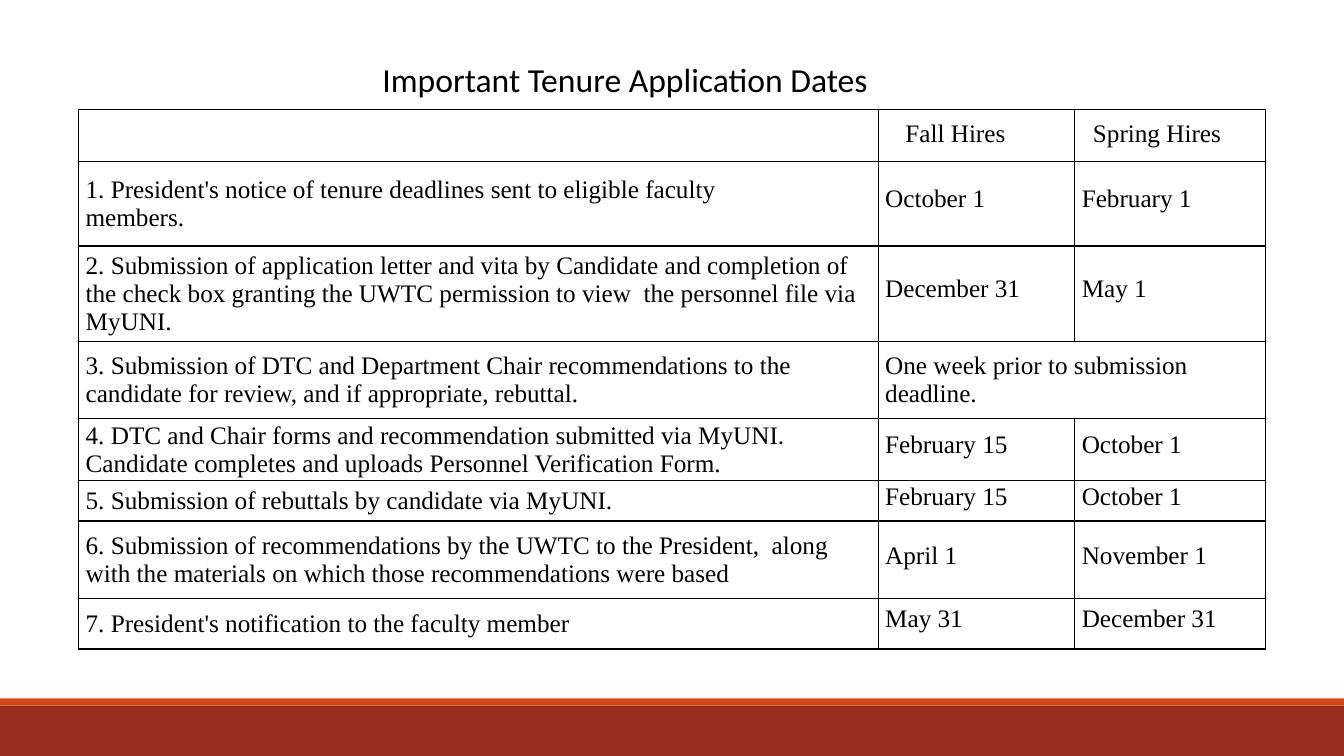
from lxml import etree
from pptx import Presentation
from pptx.dml.color import RGBColor
from pptx.enum.shapes import MSO_SHAPE
from pptx.enum.text import MSO_ANCHOR, PP_ALIGN
from pptx.oxml.ns import qn
from pptx.util import Inches, Pt

RECT = MSO_SHAPE.RECTANGLE
TOP, MIDDLE = MSO_ANCHOR.TOP, MSO_ANCHOR.MIDDLE
CENTER = PP_ALIGN.CENTER
TITLE_ONLY = 5


def rgb(value):
    return RGBColor.from_string(value)


def add_borders(cell, color, width):
    tcPr = cell._tc.get_or_add_tcPr()
    for i, side in enumerate(("lnL", "lnR", "lnT", "lnB")):
        ln = etree.Element(qn(f"a:{side}"), w=str(Pt(width)))
        fill = etree.SubElement(ln, qn("a:solidFill"))
        etree.SubElement(fill, qn("a:srgbClr"), val=color)
        tcPr.insert(i, ln)


prs = Presentation()
prs.slide_width, prs.slide_height = Inches(13.33), Inches(7.5)
slide = prs.slides.add_slide(prs.slide_layouts[TITLE_ONLY])

for top, height, color in ((7, 0.5, "9B2D1F"), (6.93, 0.07, "D34817")):
    sp = slide.shapes.add_shape(RECT, 0, Inches(top), prs.slide_width, Inches(height))
    sp.shadow.inherit = False
    sp.fill.solid()
    sp.fill.fore_color.rgb = rgb(color)
    sp.line.fill.background()

title = slide.shapes.title
box = {"left": 2.51, "top": 0.53, "width": 7.38, "height": 0.5}
for name, value in box.items():
    setattr(title, name, Inches(value))
tf = title.text_frame
tf.word_wrap = True
tf.vertical_anchor = MIDDLE
p = tf.paragraphs[0]
p.alignment = CENTER
r = p.add_run()
r.text = "Important Tenure Application Dates"
r.font.color.rgb = rgb("000000")
for name, value in {"name": "Calibri", "size": Pt(24), "bold": False}.items():
    setattr(r.font, name, value)

rows = [
    ("", "Fall Hires", "Spring Hires"),
    ("1. President's notice of tenure deadlines sent to eligible faculty members.",
     "October 1", "February 1"),
    ("2. Submission of application letter and vita by Candidate and completion of "
     "the check box granting the UWTC permission to view  the personnel file via MyUNI.",
     "December 31", "May 1"),
    ("3. Submission of DTC and Department Chair recommendations to the candidate "
     "for review, and if appropriate, rebuttal.",
     "One week prior to submission deadline.", ""),
    ("4. DTC and Chair forms and recommendation submitted via MyUNI. "
     "Candidate completes and uploads Personnel Verification Form.",
     "February 15", "October 1"),
    ("5. Submission of rebuttals by candidate via MyUNI.", "February 15", "October 1"),
    ("6. Submission of recommendations by the UWTC to the President,  along with "
     "the materials on which those recommendations were based",
     "April 1", "November 1"),
    ("7. President's notification to the faculty member", "May 31", "December 31"),
]
col_widths = [7.93, 1.95, 1.89]
row_heights = [0.51, 0.84, 0.95, 0.76, 0.62, 0.4, 0.77, 0.5]
header_indents = [0.07, 0.27, 0.18]
NOTICE, REVIEW = 1, 3

frame = slide.shapes.add_table(
    len(rows), len(col_widths), Inches(0.78), Inches(1.09),
    Inches(sum(col_widths)), Inches(sum(row_heights)))
table = frame.table
table.first_row = table.horz_banding = False
for column, width in zip(table.columns, col_widths):
    column.width = Inches(width)
for row, height in zip(table.rows, row_heights):
    row.height = Inches(height)
table.cell(REVIEW, 1).merge(table.cell(REVIEW, 2))

for i, texts in enumerate(rows):
    for j, text in enumerate(texts):
        cell = table.cell(i, j)
        cell.fill.background()
        add_borders(cell, "000000", 1)
        header = i == 0
        layout = {
            "vertical_anchor": TOP if header else MIDDLE,
            "margin_left": Inches(header_indents[j] if header else 0.07),
            "margin_right": Inches(0.8 if (i, j) == (NOTICE, 0) else 0.1 if j == 0 else 0),
            "margin_top": Pt(13.6) if header else 0,
            "margin_bottom": 0,
        }
        for name, value in layout.items():
            setattr(cell, name, value)
        p = cell.text_frame.paragraphs[0]
        p.font.size = Pt(18)
        if j > 0 and i != REVIEW:
            p.line_spacing = Pt(13.6)
        if text:
            r = p.add_run()
            r.text = text
            r.font.color.rgb = rgb("000000")
            for name, value in {"name": "Times New Roman", "size": Pt(18)}.items():
                setattr(r.font, name, value)

prs.save("out.pptx")
